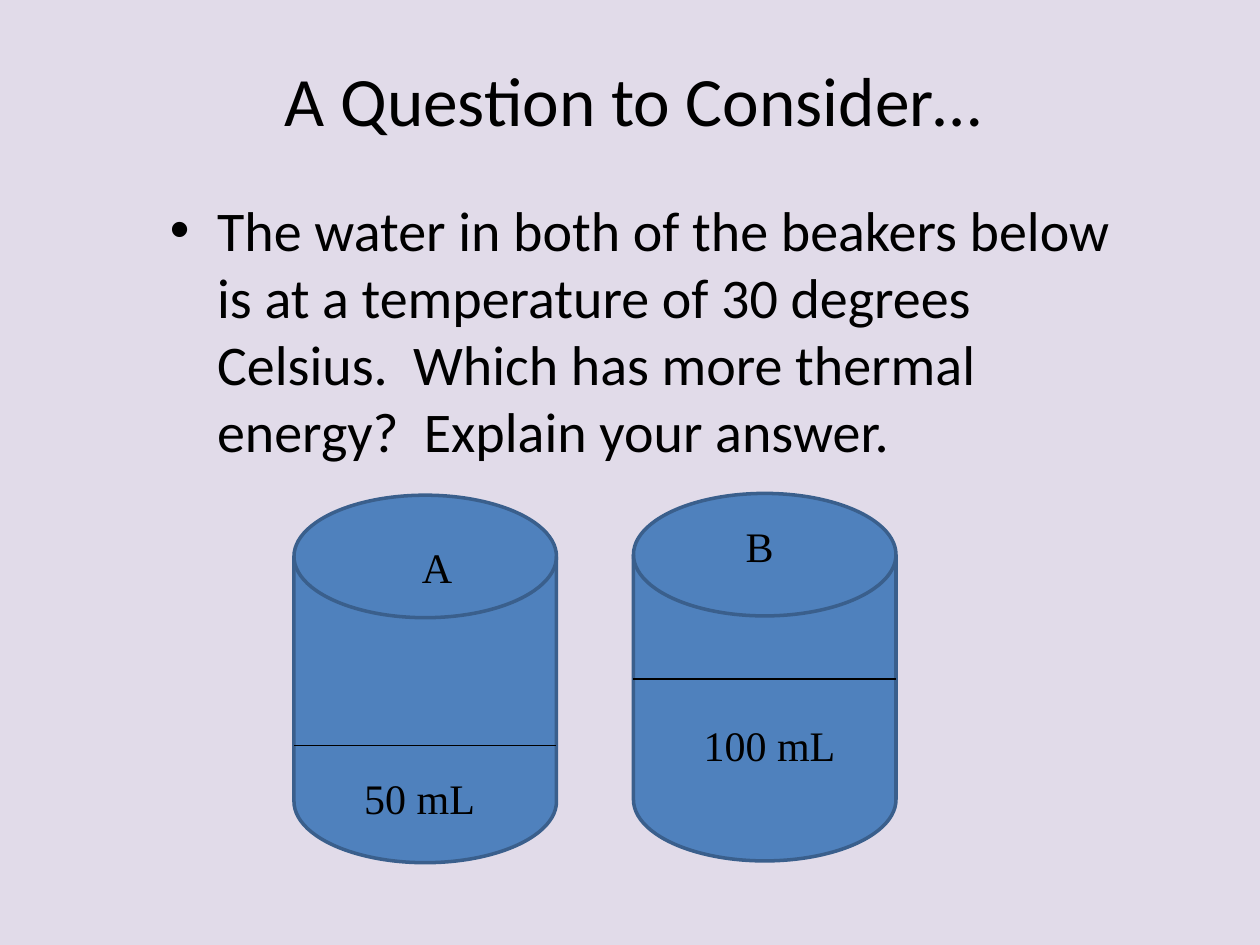
from lxml import etree
from pptx import Presentation
from pptx.dml.color import RGBColor
from pptx.enum.shapes import MSO_CONNECTOR, MSO_SHAPE
from pptx.enum.text import MSO_ANCHOR, MSO_AUTO_SIZE, PP_ALIGN
from pptx.oxml.ns import qn
from pptx.util import Pt

DISK = MSO_SHAPE.FLOWCHART_MAGNETIC_DISK
STRAIGHT = MSO_CONNECTOR.STRAIGHT
TOP, MIDDLE = MSO_ANCHOR.TOP, MSO_ANCHOR.MIDDLE
LEFT, CENTER = PP_ALIGN.LEFT, PP_ALIGN.CENTER
FIXED, GROW = MSO_AUTO_SIZE.NONE, MSO_AUTO_SIZE.SHAPE_TO_FIT_TEXT

COLORS = {"background": "E1DBE9", "text": "000000", "water": "4F81BD", "glass": "3A5F8C"}
BEAKER_WIDTH, BEAKER_HEIGHT = 150, 210

TITLE = {"font": {"name": "Calibri", "size": Pt(39.6)},
         "frame": {"vertical_anchor": MIDDLE, "auto_size": FIXED},
         "para": {"alignment": CENTER}}
BODY = {"font": {"name": "Calibri", "size": Pt(32)},
        "frame": {"vertical_anchor": TOP, "auto_size": FIXED, "margin_top": Pt(49.5)},
        "para": {"alignment": LEFT}}
LABEL = {"font": {"name": "Times New Roman", "size": Pt(24)},
         "frame": {"vertical_anchor": TOP, "auto_size": GROW},
         "para": {"alignment": LEFT}}

BEAKERS = [
    {"left": 168, "top": 283, "level": 426,
     "labels": [("A", 234, 306, 36), ("50 mL", 201, 438, 84)]},
    {"left": 362, "top": 282, "level": 388,
     "labels": [("B", 419, 294, 36), ("100 mL", 395, 407.5, 103)]},
]


def color(name):
    return RGBColor.from_string(COLORS[name])


def apply_format(target, values):
    for name, value in values.items():
        setattr(target, name, value)


def add_text(page, text, place, style):
    box = page.shapes.add_textbox(*map(Pt, place))
    frame = box.text_frame
    frame.word_wrap = True
    apply_format(frame, style["frame"])
    para = frame.paragraphs[0]
    apply_format(para, style["para"])
    span = para.add_run()
    span.text = text
    apply_format(span.font, style["font"])
    span.font.color.rgb = color("text")
    return para


def add_bullet(para, indent):
    properties = para._p.get_or_add_pPr()
    properties.set("marL", str(Pt(indent)))
    properties.set("indent", str(Pt(-indent)))
    etree.SubElement(properties, qn("a:buFont"), typeface="Arial")
    etree.SubElement(properties, qn("a:buChar"), char="•")


def add_beaker(page, left, top):
    beaker = page.shapes.add_shape(
        DISK, Pt(left), Pt(top), Pt(BEAKER_WIDTH), Pt(BEAKER_HEIGHT))
    beaker.shadow.inherit = False
    beaker.fill.solid()
    beaker.fill.fore_color.rgb = color("water")
    beaker.line.color.rgb = color("glass")
    beaker.line.width = Pt(2)


def add_water_level(page, left, level):
    line = page.shapes.add_connector(
        STRAIGHT, Pt(left), Pt(level), Pt(left + BEAKER_WIDTH), Pt(level))
    line.line.color.rgb = color("text")
    line.line.width = Pt(0.75)
    etree.SubElement(line._element.spPr, qn("a:effectLst"))


def main():
    deck = Presentation()
    deck.slide_width, deck.slide_height = Pt(720), Pt(540)
    page = deck.slides.add_slide(deck.slide_layouts[6])
    page.background.fill.solid()
    page.background.fill.fore_color.rgb = color("background")

    add_text(page, "A Question to Consider…", (77, 30, 570, 53), TITLE)
    question = add_text(
        page,
        "The water in both of the beakers below is at a temperature of "
        "30 degrees Celsius.  Which has more thermal energy?  Explain your answer.",
        (90, 62, 570, 412), BODY)
    add_bullet(question, 27)

    for beaker in BEAKERS:
        add_beaker(page, beaker["left"], beaker["top"])
        add_water_level(page, beaker["left"], beaker["level"])
        for text, left, top, width in beaker["labels"]:
            add_text(page, text, (left, top, width, 36.5), LABEL)

    deck.save("out.pptx")


if __name__ == "__main__":
    main()
